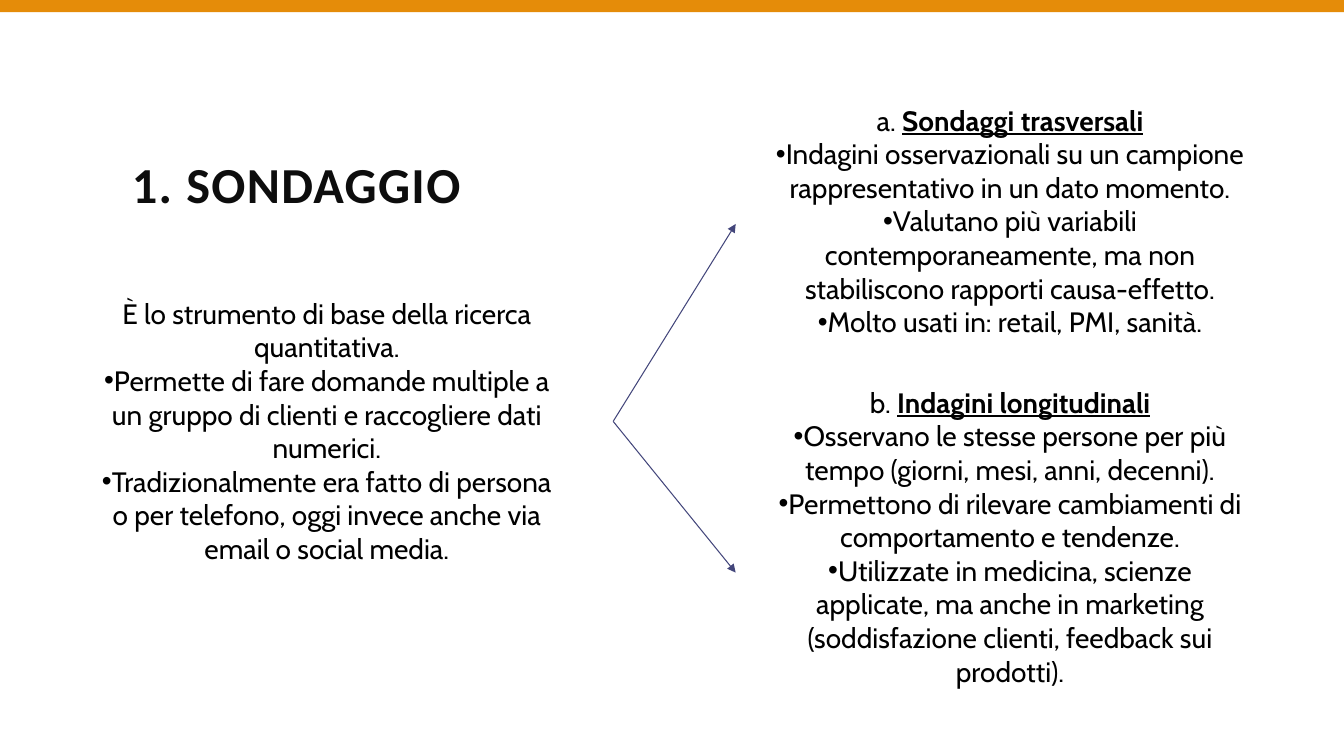
from lxml import etree
from pptx import Presentation
from pptx.dml.color import RGBColor
from pptx.enum import shapes, text
from pptx.oxml.ns import qn
from pptx.util import Pt

BLACK, TITLE_INK, ORANGE, INDIGO = "000000", "0D0D0D", "E58C09", "43467B"

SURVEY = [
    "Permette di fare domande multiple a un gruppo di clienti e raccogliere dati numerici.",
    "Tradizionalmente era fatto di persona o per telefono, oggi invece anche via email o social media.",
]
CROSS_SECTIONAL = [
    "Indagini osservazionali su un campione rappresentativo in un dato momento.",
    "Valutano più variabili contemporaneamente, ma non stabiliscono rapporti causa-effetto.",
    "Molto usati in: retail, PMI, sanità.",
]
LONGITUDINAL = [
    "Osservano le stesse persone per più tempo (giorni, mesi, anni, decenni).",
    "Permettono di rilevare cambiamenti di comportamento e tendenze.",
    "Utilizzate in medicina, scienze applicate, ma anche in marketing "
    "(soddisfazione clienti, feedback sui prodotti).",
]


def rgb(value):
    return RGBColor.from_string(value)


def place(item, left, top, width, height):
    item.left, item.top = Pt(left), Pt(top)
    item.width, item.height = Pt(width), Pt(height)


def add_text(paragraph, words, font="Cabin", size=20, color=BLACK,
             bold=False, underline=False, spacing=None):
    run = paragraph.add_run()
    run.text = words
    run.font.name, run.font.size = font, Pt(size)
    run.font.bold, run.font.underline = bold, underline
    run.font.color.rgb = rgb(color)
    if spacing:
        run.font._element.set("spc", str(spacing * 100))


def format_paragraph(paragraph, bullet=False):
    """Centre a list paragraph without indents, with or without its bullet."""
    paragraph.alignment = text.PP_ALIGN.CENTER
    paragraph.space_before = Pt(0)
    properties = paragraph._p.get_or_add_pPr()
    properties.set("marL", "0")
    properties.set("indent", "0")
    if bullet:
        etree.SubElement(properties, qn("a:buFont")).set("typeface", "Arial")
        etree.SubElement(properties, qn("a:buChar")).set("char", "•")
    else:
        etree.SubElement(properties, qn("a:buNone"))


def fill_list(body, box, lead, items, heading=None):
    place(body, *box)
    frame = body.text_frame
    frame.word_wrap = True
    frame.auto_size = text.MSO_AUTO_SIZE.SHAPE_TO_FIT_TEXT
    frame.vertical_anchor = text.MSO_ANCHOR.TOP
    opening = frame.paragraphs[0]
    format_paragraph(opening)
    add_text(opening, lead)
    if heading:
        add_text(opening, heading, bold=True, underline=True)
    for item in items:
        paragraph = frame.add_paragraph()
        format_paragraph(paragraph, bullet=True)
        add_text(paragraph, item)


def fill_title(title, words):
    place(title, 87, 103, 918, 33)
    frame = title.text_frame
    frame.auto_size = text.MSO_AUTO_SIZE.NONE
    frame.vertical_anchor = text.MSO_ANCHOR.TOP
    frame.margin_top = Pt(6)
    heading = frame.paragraphs[0]
    heading.alignment = text.PP_ALIGN.LEFT
    add_text(heading, words, font="Calibri", size=36, color=TITLE_INK, bold=True, spacing=1)


def add_top_bar(slide):
    bar = slide.shapes.add_shape(shapes.MSO_SHAPE.RECTANGLE, 0, 0, Pt(960), Pt(8.75))
    bar.shadow.inherit = False
    bar.fill.solid()
    bar.fill.fore_color.rgb = rgb(ORANGE)
    bar.line.fill.background()


def add_arrow(slide, start, end):
    arrow = slide.shapes.add_connector(
        shapes.MSO_CONNECTOR.STRAIGHT, *map(Pt, start + end))
    arrow.line.color.rgb = rgb(INDIGO)
    arrow.line.width = Pt(0.75)
    etree.SubElement(arrow.line._get_or_add_ln(), qn("a:tailEnd")).set("type", "triangle")
    etree.SubElement(arrow._element.spPr, qn("a:effectLst"))


def main():
    deck = Presentation()
    deck.slide_width, deck.slide_height = Pt(960), Pt(540)
    slide = deck.slides.add_slide(deck.slide_layouts.get_by_name("Comparison"))
    fill_title(slide.shapes.title, "1. SONDAGGIO")

    survey, cross_sectional, longitudinal, spare = list(slide.placeholders)[1:5]
    spare._element.getparent().remove(spare._element)
    fill_list(survey, (62, 208, 343, 201),
              "È lo strumento di base della ricerca quantitativa.", SURVEY)
    fill_list(cross_sectional, (546, 70, 351, 177), "a. ", CROSS_SECTIONAL,
              heading="Sondaggi trasversali")
    fill_list(longitudinal, (546, 271.5, 351, 201), "b. ", LONGITUDINAL,
              heading="Indagini longitudinali")

    add_top_bar(slide)
    for arrow_end in ((525.5, 160), (525.5, 409)):
        add_arrow(slide, (438, 301), arrow_end)
    deck.save("out.pptx")


if __name__ == "__main__":
    main()
